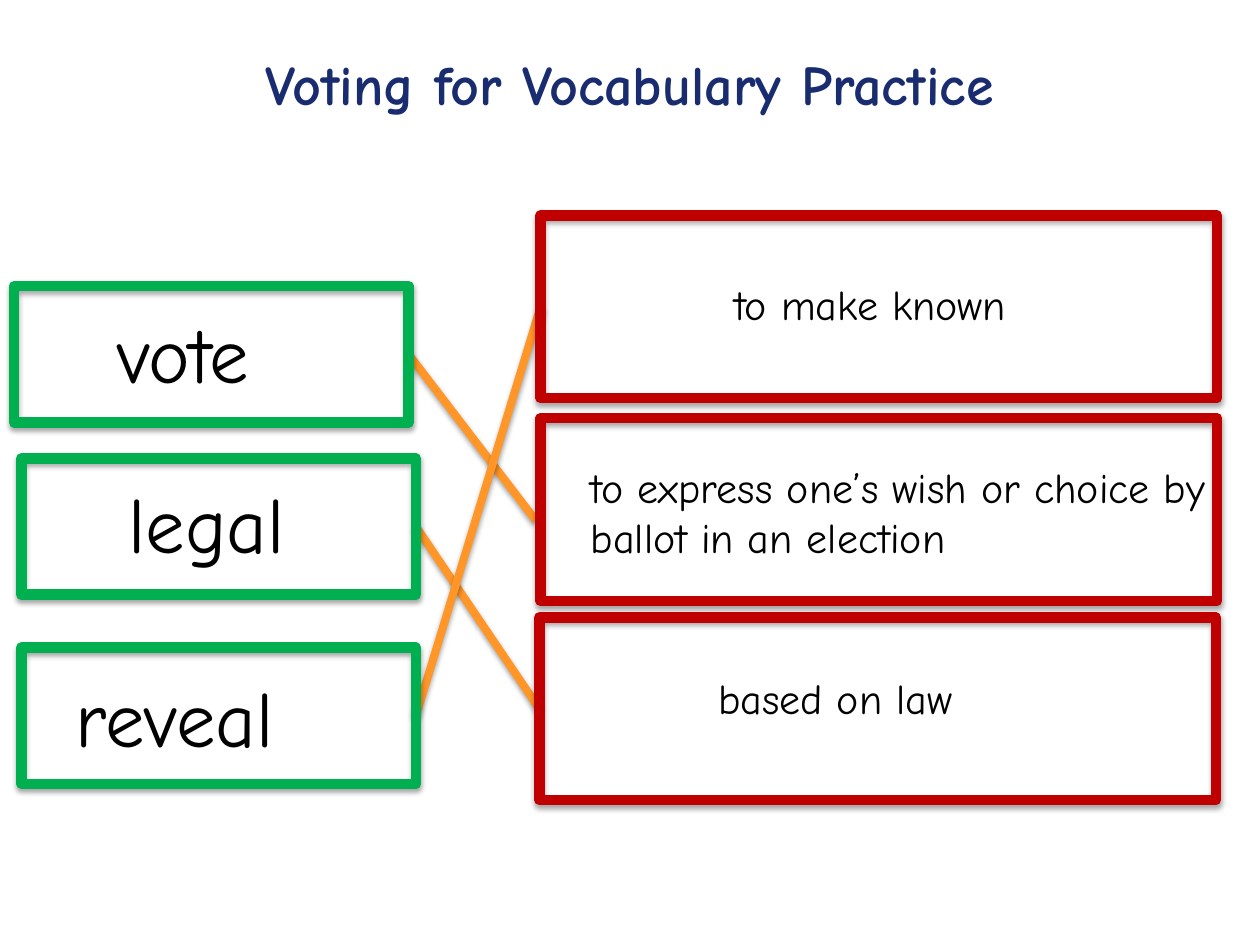
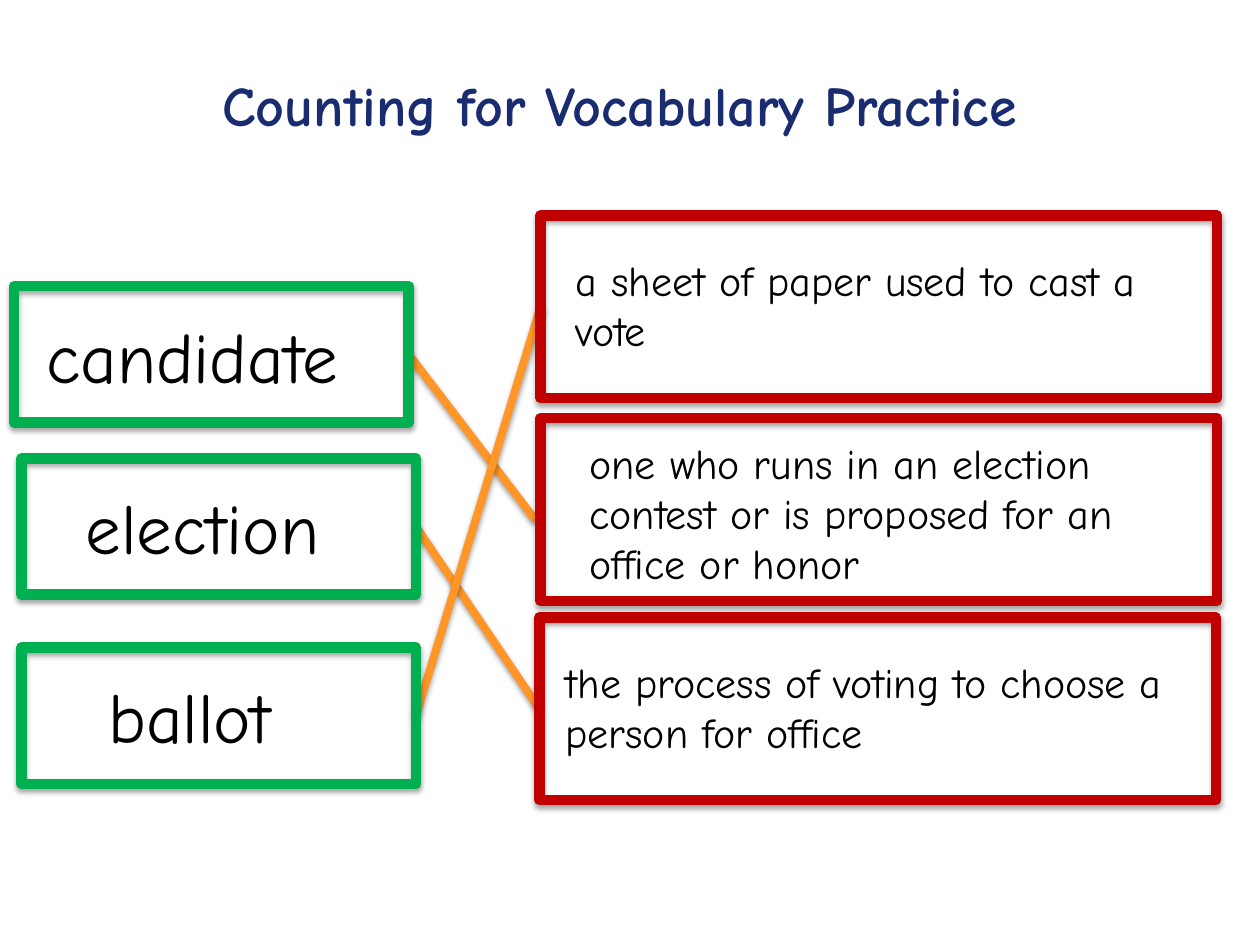
"""Build two vocabulary matching slides that join each term to its definition."""
import pptx
import pptx.dml.color
import pptx.enum.shapes
import pptx.enum.text
import pptx.oxml
import pptx.oxml.ns
import pptx.util

Pt = pptx.util.Pt
ALIGN = pptx.enum.text.PP_ALIGN
AUTO_SIZE = pptx.enum.text.MSO_AUTO_SIZE
ANCHOR = pptx.enum.text.MSO_ANCHOR

SLIDES = [
    {
        "title": ("Voting for Vocabulary Practice", (36, 10.8)),
        "term_size": 45,
        "terms": [
            ("vote", (59.8, 170.6, 120.2, 62), ALIGN.LEFT),
            ("legal", (2.2, 267.8, 231.8, 62), ALIGN.CENTER),
            ("reveal", (36, 378.7, 178.6, 62), ALIGN.LEFT),
        ],
        "definitions": [
            ("to make known", (312.5, 155.5, 369.4, 36), ALIGN.CENTER),
            ("to express one’s wish or choice by ballot in an election",
             (330.5, 259.9, 371.5, 65.5), ALIGN.LEFT),
            ("based on law", (403.2, 380.9, 300, 36), ALIGN.LEFT),
        ],
    },
    {
        "title": ("Counting for Vocabulary Practice", (30.2, 23)),
        "term_size": 40.5,
        "terms": [
            ("candidate", (19.4, 175, 220.3, 56), ALIGN.LEFT),
            ("election", (41.8, 272.9, 204.5, 56), ALIGN.LEFT),
            ("ballot", (54.7, 380.9, 178.6, 56), ALIGN.LEFT),
        ],
        "definitions": [
            ("a sheet of paper used to cast a vote",
             (321.8, 141.8, 369.4, 65.5), ALIGN.LEFT),
            ("one who runs in an election contest or is proposed for an office or honor",
             (329.8, 246.2, 371.5, 94.3), ALIGN.LEFT),
            ("the process of voting to choose a person for office",
             (316.1, 371.5, 375.1, 65.5), ALIGN.LEFT),
        ],
    },
]

THEME = {
    "font": "Comic Neue",
    "title_size": 32,
    "definition_size": 24,
    "title": "182C6F",
    "text": "000000",
    "term_frame": "00B050",
    "definition_frame": "C00000",
    "match": "FF9627",
    "frame_width": 6,
    "match_width": 4.5,
}

TITLE_SIZE = (648, 67.7)
TERM_SIZE = (225.5, 77.8)
DEFINITION_SIZE = (386.6, 104.4)
TERM_FRAMES = [(8, 163.5), (12.2, 262), (12.2, 370.1)]
DEFINITION_FRAMES = [(308.9, 123.1), (308.9, 239), (308.2, 352.8)]
MATCHES = [(0, 1, (-2.9, 6)), (1, 2, (0, 0)), (2, 0, (0, 0))]


def points(*values):
    return [Pt(value) for value in values]


def color(name):
    return pptx.dml.color.RGBColor.from_string(THEME[name])


def apply(target, formats):
    for name, value in formats.items():
        setattr(target, name, value)


def write(shape, text, size, color_name, paragraph_formats, frame_formats, bold=False):
    apply(shape.text_frame, {"word_wrap": True, **frame_formats})
    paragraph = shape.text_frame.paragraphs[0]
    paragraph.text = text
    apply(paragraph, paragraph_formats)
    apply(paragraph.font, {"name": THEME["font"], "size": Pt(size), "bold": bold})
    paragraph.font.color.rgb = color(color_name)


def add_shadow(shape, distance, opacity):
    shape._element.spPr.append(pptx.oxml.parse_xml(
        f'<a:effectLst {pptx.oxml.ns.nsdecls("a")}>'
        f'<a:outerShdw blurRad="{Pt(3.15)}" dist="{Pt(distance)}" dir="5400000" rotWithShape="0">'
        f'<a:srgbClr val="000000"><a:alpha val="{opacity * 1000}"/></a:srgbClr>'
        '</a:outerShdw></a:effectLst>'))


def add_title(slide, text, position):
    title = slide.shapes.title
    apply(title, dict(zip(("left", "top", "width", "height"), points(*position, *TITLE_SIZE))))
    write(title, text, THEME["title_size"], "title",
          {"alignment": ALIGN.CENTER, "line_spacing": 1.15, "space_after": Pt(10)},
          {"vertical_anchor": ANCHOR.MIDDLE, "auto_size": AUTO_SIZE.NONE}, bold=True)


def add_texts(slide, entries, size):
    for text, box, alignment in entries:
        shape = slide.shapes.add_textbox(*points(*box))
        write(shape, text, size, "text", {"alignment": alignment},
              {"auto_size": AUTO_SIZE.SHAPE_TO_FIT_TEXT})


def add_matches(slide):
    for term, definition, (shift_x, shift_y) in MATCHES:
        term_left, term_top = TERM_FRAMES[term]
        definition_left, definition_top = DEFINITION_FRAMES[definition]
        start = (term_left + TERM_SIZE[0], term_top + TERM_SIZE[1] / 2)
        end = (definition_left + shift_x, definition_top + DEFINITION_SIZE[1] / 2 + shift_y)
        connector = slide.shapes.add_connector(
            pptx.enum.shapes.MSO_CONNECTOR.STRAIGHT, *points(*start, *end))
        connector.line.color.rgb = color("match")
        connector.line.width = Pt(THEME["match_width"])
        add_shadow(connector, 1.57, 38)


def add_frames(slide, positions, size, color_name):
    for position in positions:
        frame = slide.shapes.add_shape(
            pptx.enum.shapes.MSO_SHAPE.RECTANGLE, *points(*position, *size))
        frame.fill.background()
        frame.line.color.rgb = color(color_name)
        frame.line.width = Pt(THEME["frame_width"])
        add_shadow(frame, 1.81, 35)


def main():
    presentation = pptx.Presentation()
    apply(presentation, {"slide_width": Pt(720), "slide_height": Pt(540)})
    for content in SLIDES:
        slide = presentation.slides.add_slide(presentation.slide_layouts.get_by_name("Title Only"))
        add_title(slide, *content["title"])
        add_texts(slide, content["terms"], content["term_size"])
        add_texts(slide, content["definitions"], THEME["definition_size"])
        add_matches(slide)
        add_frames(slide, TERM_FRAMES, TERM_SIZE, "term_frame")
        add_frames(slide, DEFINITION_FRAMES, DEFINITION_SIZE, "definition_frame")
    presentation.save("out.pptx")


if __name__ == "__main__":
    main()
